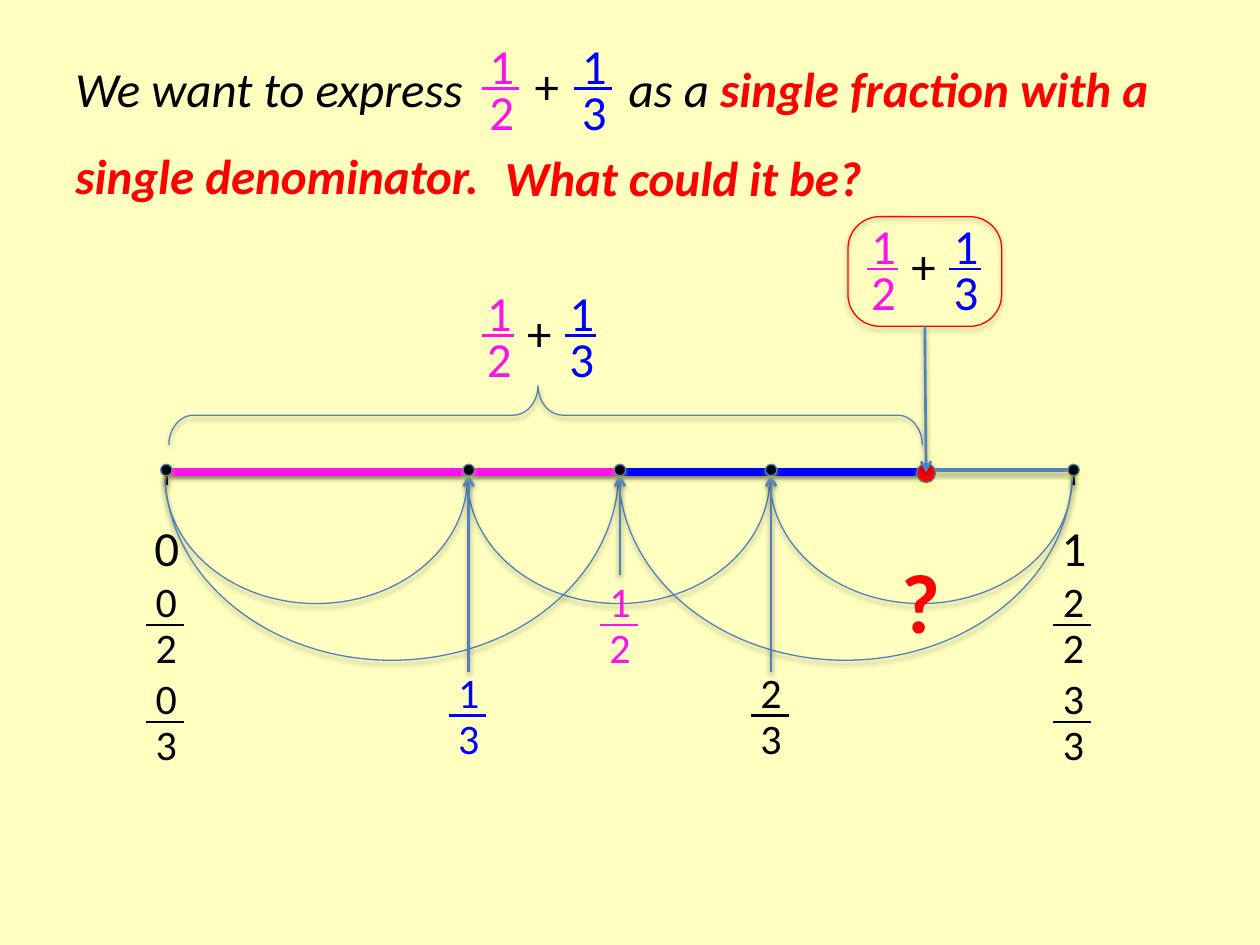
from lxml.etree import SubElement
from pptx import Presentation
from pptx.dml.color import RGBColor
from pptx.enum.shapes import MSO_CONNECTOR, MSO_SHAPE
from pptx.enum.text import MSO_ANCHOR, PP_ALIGN
from pptx.oxml.ns import qn
from pptx.util import Inches, Pt

BLACK = RGBColor(0, 0, 0)
RED = RGBColor(0xFF, 0, 0)
BLUE = RGBColor(0, 0, 0xFF)
PINK = RGBColor(0xFF, 0x11, 0xEA)
STEEL = RGBColor(0x4F, 0x81, 0xBD)
YELLOW = RGBColor(0xFF, 0xFF, 0)
PALE_YELLOW = RGBColor(0xFF, 0xFF, 0xBF)

# The slide is a grid of 100 columns by 75 rows of square cells.
CELL = Inches(0.1)
COLUMNS, ROWS = 100, 75

AXIS_ROW = 37.3
AXIS_START, AXIS_LENGTH = 13.2, 72


def cells(*counts):
    return [round(count * CELL) for count in counts]


def axis_column(value):
    return AXIS_START + AXIS_LENGTH * value


def add_shadow(shape, color):
    """Cast a soft shadow straight down."""
    shape.shadow.inherit = False
    effects = shape._element.spPr.find(qn("a:effectLst"))
    shadow = SubElement(effects, qn("a:outerShdw"), blurRad=str(Pt(3.1)),
                        dist=str(Pt(1.6)), dir="5400000", rotWithShape="0")
    tint = SubElement(shadow, qn("a:srgbClr"), val=str(color))
    SubElement(tint, qn("a:alpha"), val="38000")


def add_line(slide, start, end, color, width=1.5, shadow=True, arrow=False):
    line = slide.shapes.add_connector(
        MSO_CONNECTOR.STRAIGHT, *cells(*start, *end))
    line.line.color.rgb = color
    line.line.width = Pt(width)
    if arrow:
        SubElement(line.line._get_or_add_ln(), qn("a:tailEnd"), type="arrow")
    properties = line._element.spPr
    if shadow:
        add_shadow(line, BLACK)
    else:
        SubElement(properties, qn("a:effectLst"))
    return line


def add_outline(slide, kind, box, color, shadow_color=BLACK, fill=None):
    shape = slide.shapes.add_shape(kind, *cells(*box))
    if fill is None:
        shape.fill.background()
    else:
        shape.fill.solid()
        shape.fill.fore_color.rgb = fill
    shape.line.color.rgb = color
    shape.line.width = Pt(0.75)
    add_shadow(shape, shadow_color)
    return shape


def add_turned(slide, kind, left, top, span, depth, adjustments):
    """Draw a bracket turned a quarter left so that it lies along the axis."""
    box = (left + (span - depth) / 2, top + (depth - span) / 2, depth, span)
    shape = add_outline(slide, kind, box, STEEL)
    shape.rotation = 270
    for index, value in enumerate(adjustments):
        shape.adjustments[index] = value


def add_text(slide, box, text, size, color, align=PP_ALIGN.CENTER,
             anchor=MSO_ANCHOR.TOP, bold=False, italic=False):
    frame = slide.shapes.add_textbox(*cells(*box)).text_frame
    frame.word_wrap = True
    frame.vertical_anchor = anchor
    paragraph = frame.paragraphs[0]
    paragraph.alignment = align
    paragraph.text = text
    font = paragraph.font
    font.name, font.size = "Calibri", Pt(size)
    font.bold, font.italic = bold, italic
    font.color.rgb = color
    return paragraph


def add_fraction(slide, center, top, parts, color=BLACK, size=24, bar=3):
    for row, part in enumerate(parts):
        add_text(slide, (center - 3.2, top + 3.65 * row, 6.4, 5), part, size, color)
    bar_row = top + (4.4 if size == 24 else 4.75)
    add_line(slide, (center - 0.1 - bar / 2, bar_row),
             (center - 0.1 + bar / 2, bar_row), color, shadow=False)


def add_sum(slide, center, top, spread=6.55, bar=2.5):
    """Write one half plus one third around a middle column."""
    add_fraction(slide, center - spread / 2, top, "12", PINK, 28, bar)
    add_fraction(slide, center + spread / 2, top, "13", BLUE, 28, bar)
    add_text(slide, (center - 2.1, top + 1.6, 4, 5.7), "+", 28, BLACK)


def build_heading(slide, left, top, width, height):
    def phrase(offset, down, span, text, color, bold):
        return add_text(slide, (left + offset, top + down, span, height), text, 28,
                        color, PP_ALIGN.LEFT, MSO_ANCHOR.MIDDLE, bold, True)

    phrase(0, 0, 34, "We want to express", BLACK, False)
    ending = phrase(43.9, 0, width - 43.9, "as a ", BLACK, False)
    emphasis = ending.add_run()
    emphasis.text = "single fraction with a"
    emphasis.font.bold = True
    emphasis.font.color.rgb = RED
    phrase(0, 6.9, 34, "single denominator.", RED, True)
    phrase(34.1, 7.1, 34, "What could it be?", RED, True)
    add_sum(slide, left + 38.5, top + 1.6, spread=7.35, bar=3)


def build_axis(slide):
    start, end = axis_column(0), axis_column(1)
    for column, label in ((start, "0"), (end, "1")):
        add_line(slide, (column, AXIS_ROW), (column, AXIS_ROW + 1.2), BLACK, 2)
        add_text(slide, (column - 4.1, AXIS_ROW + 3.3, 8.3, 5.7), label, 28, BLACK)
    add_line(slide, (start, AXIS_ROW), (end, AXIS_ROW), STEEL, 2)

    for parts, top, depth in ((3, 0.6, 10), (2, 0.1, 15)):
        for part in range(parts):
            add_turned(slide, MSO_SHAPE.LEFT_BRACKET, axis_column(part / parts) - 0.1,
                       AXIS_ROW + top, AXIS_LENGTH / parts, depth, [1.57])

    half, total = axis_column(1 / 2), axis_column(5 / 6)
    for first, last, color in ((start, half, PINK), (half, total, BLUE)):
        add_line(slide, (first, AXIS_ROW + 0.15), (last, AXIS_ROW + 0.15), color, 4.5)


def build_fraction_labels(slide):
    for parts, top in ((2, AXIS_ROW + 7.9), (3, AXIS_ROW + 15.6)):
        for part in range(parts + 1):
            column = axis_column(part / parts)
            inner = 0 < part < parts
            raised = 0.5 if inner and parts == 3 else 0
            color = (PINK if parts == 2 else BLUE) if inner and part == 1 else BLACK
            if inner:
                add_line(slide, (column, top + 0.4), (column, AXIS_ROW + 0.4),
                         STEEL, arrow=True)
            add_fraction(slide, column, top - raised, (str(part), str(parts)), color)


def build_points(slide):
    def point(column, row, size, color):
        add_outline(slide, MSO_SHAPE.OVAL, (column - size / 2, row - size / 2, size, size),
                    STEEL, YELLOW, color)

    for value in (0, 1 / 3, 1 / 2, 2 / 3, 1):
        point(axis_column(value), AXIS_ROW, 0.9, BLACK)
    point(axis_column(5 / 6) + 0.3, AXIS_ROW + 0.25, 1.5, RED)
    add_text(slide, (70.3, AXIS_ROW + 5.8, 5.6, 13.1), "?", 48, RED, bold=True)


def build_brace(slide, left, top, span, depth):
    add_turned(slide, MSO_SHAPE.RIGHT_BRACE, left, top, span, depth, [0.42, 0.49])
    add_sum(slide, left + span / 2 - 0.4, top - 8.7)


def build_callout(slide, left, top, width, height):
    frame = add_outline(slide, MSO_SHAPE.ROUNDED_RECTANGLE,
                        (left, top, width, height), RED)
    frame.adjustments[0] = 0.29
    middle = left + width / 2
    arrow = add_line(slide, (middle, top + height), (middle + 0.1, AXIS_ROW + 0.2),
                     STEEL, arrow=True)
    arrow.begin_connect(frame, 2)
    add_sum(slide, middle, top - 0.6)


def main():
    presentation = Presentation()
    presentation.slide_width, presentation.slide_height = cells(COLUMNS, ROWS)
    slide = presentation.slides.add_slide(presentation.slide_layouts[6])
    slide.background.fill.solid()
    slide.background.fill.fore_color.rgb = PALE_YELLOW
    build_axis(slide)
    build_fraction_labels(slide)
    build_points(slide)
    build_brace(slide, 13.4, 30.6, 59.8, 4.7)
    build_callout(slide, 67.3, 17.2, 12.2, 8.7)
    build_heading(slide, 5, 0.7, 90, 12.5)
    presentation.save("out.pptx")


if __name__ == "__main__":
    main()
